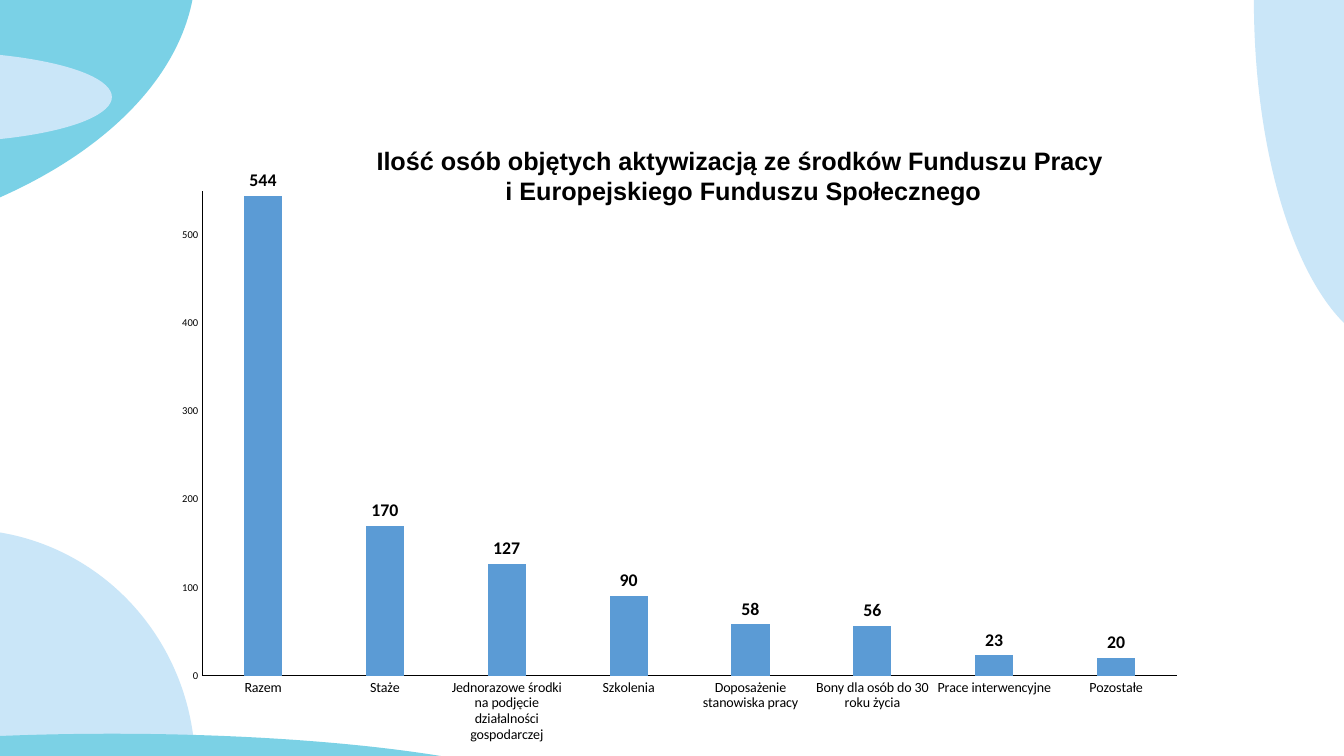
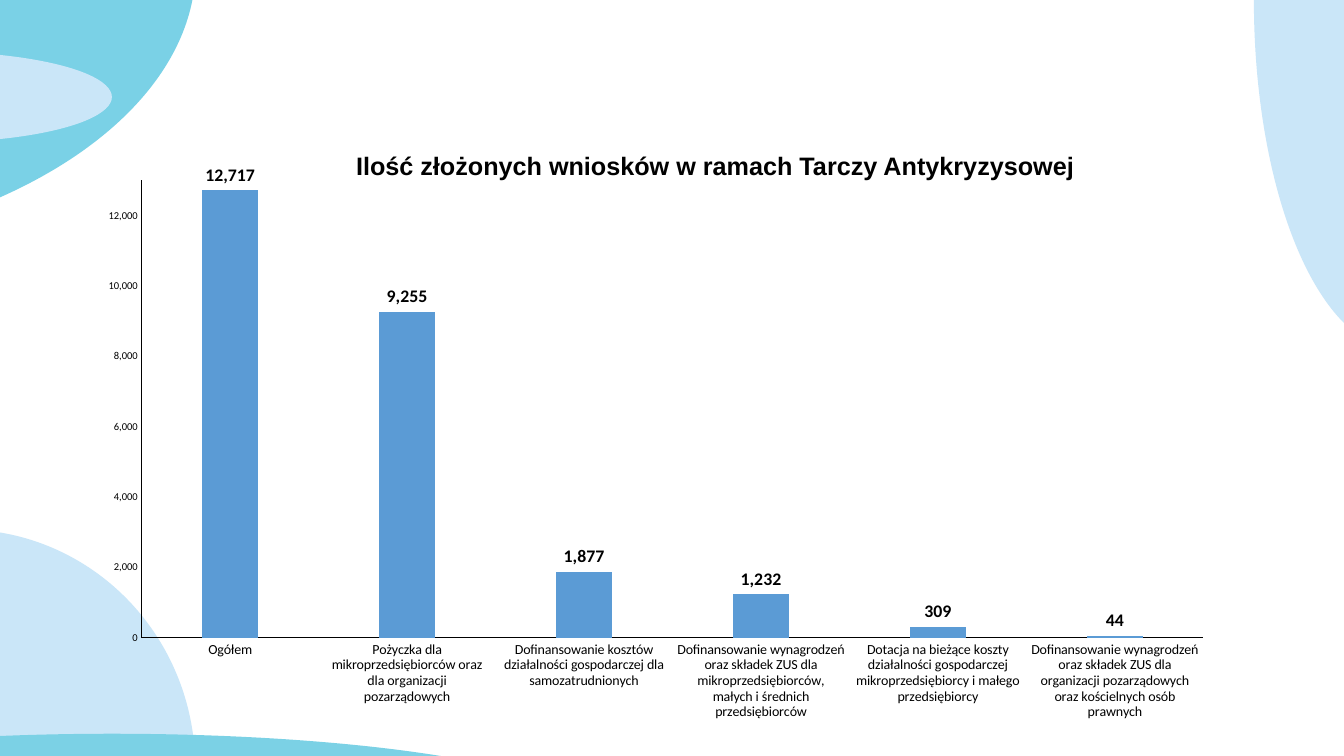
from lxml import etree
from pptx import Presentation
from pptx.chart import data as chart_data
from pptx.dml.color import RGBColor
from pptx.enum import chart as charts, shapes, text
from pptx.oxml import ns
from pptx.util import Cm, Pt

COLOURS = {"teal": "7AD1E6", "aqua": "7BD1E5", "sky": "CAE6F8",
           "bar": "5B9BD5", "ink": "000000"}
TITLE_FONT, CHART_FONT = "Arial", "Calibri"
NUMBER_FORMAT = "#,##0"

# Background ellipses: left, top, width, height in cm, and colour
ELLIPSES = [
    (-20.14, -8.13, 25.07, 14.6, "teal"),
    (-6.27, 1.3, 9.09, 2.29, "sky"),
    (-6.81, 13.34, 11.73, 11.99, "sky"),
    (-9.09, 18.49, 23.83, 3.99, "aqua"),
    (31.6, -8.81, 7.39, 17.63, "sky"),
]

PAGES = [
    dict(
        title="Ilość osób objętych aktywizacją ze środków Funduszu Pracy "
              "\vi Europejskiego Funduszu Społecznego",
        title_box=(9.02, 3.48, 19.43, 1.88),
        chart_box=(2.44, 3.35, 28.24, 15.7),
        plot=(0.094, 0.093, 0.87, 0.778),
        top=550, step=100,
        values={
            "Razem": 544,
            "Staże": 170,
            "Jednorazowe środki na podjęcie działalności gospodarczej": 127,
            "Szkolenia": 90,
            "Doposażenie stanowiska pracy": 58,
            "Bony dla osób do 30 roku życia": 56,
            "Prace interwencyjne": 23,
            "Pozostałe": 20,
        },
    ),
    dict(
        title="Ilość złożonych wniosków w ramach Tarczy Antykryzysowej",
        title_box=(8.31, 3.38, 19.43, 1.57),
        chart_box=(0.61, 4.14, 30.86, 14.55),
        plot=(0.096, 0.023, 0.867, 0.796),
        top=13000, step=2000,
        values={
            "Ogółem": 12717,
            "Pożyczka dla mikroprzedsiębiorców oraz dla organizacji "
            "pozarządowych": 9255,
            "Dofinansowanie kosztów działalności gospodarczej dla "
            "samozatrudnionych": 1877,
            "Dofinansowanie wynagrodzeń oraz składek ZUS dla "
            "mikroprzedsiębiorców, małych i średnich przedsiębiorców": 1232,
            "Dotacja na bieżące koszty działalności gospodarczej "
            "mikroprzedsiębiorcy i małego przedsiębiorcy": 309,
            "Dofinansowanie wynagrodzeń oraz składek ZUS dla organizacji "
            "pozarządowych oraz kościelnych osób prawnych": 44,
        },
    ),
]


def colour(name):
    return RGBColor.from_string(COLOURS[name])


def in_cm(box):
    return [Cm(length) for length in box]


def set_font(font, name, size, bold=False, ink="ink"):
    font.name, font.size, font.bold = name, Pt(size), bold
    font.color.rgb = colour(ink)


def write_text(box, words, align=text.PP_ALIGN.CENTER,
               anchor=text.MSO_ANCHOR.MIDDLE, **font_format):
    frame = box.text_frame
    frame.word_wrap = True
    frame.auto_size = text.MSO_AUTO_SIZE.NONE
    frame.vertical_anchor = anchor
    para = frame.paragraphs[0]
    para.text = words
    para.alignment = align
    for span in para.runs:
        set_font(span.font, **font_format)


def decorate_layout(layout, page):
    """Draw the ellipses and move them behind everything on the layout."""
    for position, (*box, fill) in enumerate(ELLIPSES, start=2):
        ellipse = page.shapes.add_shape(shapes.MSO_SHAPE.OVAL, *in_cm(box))
        ellipse.shadow.inherit = False
        ellipse.fill.solid()
        ellipse.fill.fore_color.rgb = colour(fill)
        ellipse.line.fill.background()
        layout.shapes.element.insert(position, ellipse.element)


def place_plot(chart, plot):
    """Fix the inner plot area and make the chart background clear."""
    area = chart.element.find(".//" + ns.qn("c:plotArea"))
    for old in area.findall(ns.qn("c:layout")):
        area.remove(old)
    layout = etree.Element(ns.qn("c:layout"))
    manual = etree.SubElement(layout, ns.qn("c:manualLayout"))
    settings = [("layoutTarget", "inner"), ("xMode", "edge"), ("yMode", "edge")]
    settings += zip("xywh", plot)
    for tag, value in settings:
        etree.SubElement(manual, ns.qn("c:" + tag)).set("val", str(value))
    area.insert(0, layout)

    clear = etree.Element(ns.qn("c:spPr"))
    for tag in ("a:noFill", "a:ln"):
        etree.SubElement(clear, ns.qn(tag))
    etree.SubElement(clear[1], ns.qn("a:noFill"))
    chart.element.find(ns.qn("c:chart")).addnext(clear)


def format_axis(axis, size, line_width):
    axis.has_major_gridlines = False
    axis.major_tick_mark = axis.minor_tick_mark = charts.XL_TICK_MARK.NONE
    axis.format.line.color.rgb = colour("ink")
    axis.format.line.width = Pt(line_width)
    set_font(axis.tick_labels.font, CHART_FONT, size)


def add_column_chart(page, box, values, plot, top, step):
    source = chart_data.CategoryChartData(number_format=NUMBER_FORMAT)
    source.categories = list(values)
    source.add_series("Series 1", list(values.values()))
    chart = page.shapes.add_chart(
        charts.XL_CHART_TYPE.COLUMN_CLUSTERED, *in_cm(box), source).chart
    chart.has_title = chart.has_legend = False
    set_font(chart.font, CHART_FONT, 10)
    place_plot(chart, plot)

    # Axes
    format_axis(chart.category_axis, 10, 0.56)
    scale = chart.value_axis
    format_axis(scale, 7.5, 0.75)
    scale.minimum_scale, scale.maximum_scale, scale.major_unit = 0, top, step
    scale.tick_labels.number_format = NUMBER_FORMAT
    scale.tick_labels.number_format_is_linked = False

    # Columns and their values
    columns = chart.plots[0]
    columns.gap_width, columns.overlap = 219, -27
    columns.vary_by_categories = False
    series = columns.series[0]
    series.invert_if_negative = False
    series.format.fill.solid()
    series.format.fill.fore_color.rgb = colour("bar")
    labels = series.data_labels
    labels.show_value = True
    labels.position = charts.XL_LABEL_POSITION.OUTSIDE_END
    labels.number_format = NUMBER_FORMAT
    labels.number_format_is_linked = False
    set_font(labels.font, CHART_FONT, 12.7, bold=True)


def fill_chart_page(page, title, title_box, chart_box, **chart_format):
    heading = page.shapes.title
    heading.left, heading.top, heading.width, heading.height = in_cm(title_box)
    write_text(heading, title, name=TITLE_FONT, size=18, bold=True)
    add_column_chart(page, chart_box, **chart_format)


def main():
    deck = Presentation()
    deck.slide_width, deck.slide_height = Cm(33.87), Cm(19.05)
    layout = deck.slide_layouts.get_by_name("Title Only")
    pages = [deck.slides.add_slide(layout) for _ in PAGES]
    decorate_layout(layout, pages[0])
    for page, content in zip(pages, PAGES):
        fill_chart_page(page, **content)
    deck.save("out.pptx")


if __name__ == "__main__":
    main()
